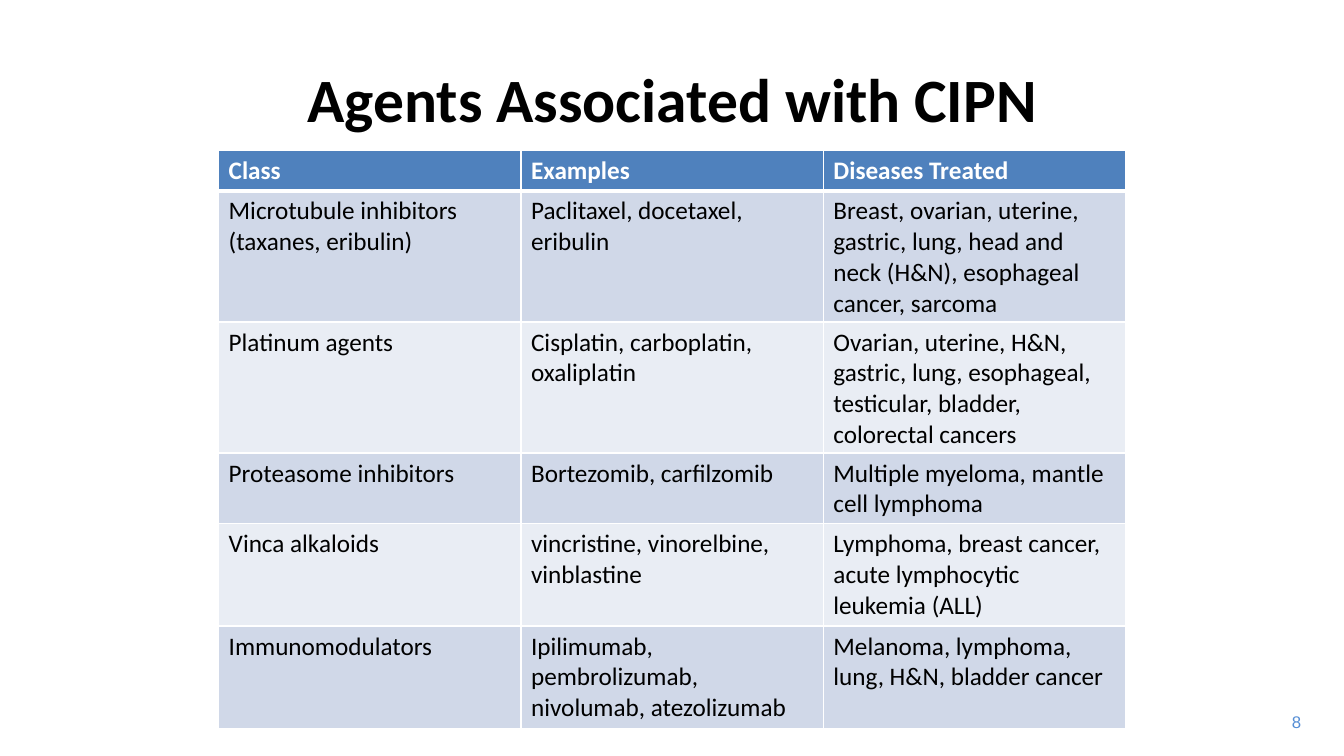
from dataclasses import dataclass

from lxml import etree
from pptx import Presentation
from pptx.dml.color import RGBColor
from pptx.enum import text
from pptx.oxml import ns
from pptx.slide import Slide
from pptx.table import _Cell
from pptx.text.text import TextFrame
from pptx.util import Cm, Pt


@dataclass(frozen=True)
class Theme:
    body_font: str = "Calibri"
    number_font: str = "Arial"
    title_size: int = 44
    table_size: int = 18
    number_size: int = 12
    ink: str = "000000"
    white: str = "FFFFFF"
    header: str = "4F81BD"
    bands: tuple[str, str] = ("D0D8E8", "E9EDF4")
    number: str = "558ED5"
    border: int = 1
    header_border: int = 3


@dataclass(frozen=True)
class Style:
    font: str
    size: int
    color: str
    bold: bool = False
    align: text.PP_ALIGN = text.PP_ALIGN.LEFT


@dataclass(frozen=True)
class Label:
    words: str
    left: float
    top: float
    width: float
    height: float
    style: Style
    anchor: text.MSO_ANCHOR = text.MSO_ANCHOR.TOP
    wrap: bool = True


@dataclass(frozen=True)
class AgentRow:
    category: str
    examples: str
    diseases: str
    height: float


THEME = Theme()

LABELS = [
    Label("8", 32, 17.81, 1.04, 0.76,
          Style(THEME.number_font, THEME.number_size, THEME.number, align=text.PP_ALIGN.RIGHT),
          wrap=False),
    Label("Agents Associated with CIPN", 5.13, 1.17, 23.65, 2.57,
          Style(THEME.body_font, THEME.title_size, THEME.ink, True, text.PP_ALIGN.CENTER),
          text.MSO_ANCHOR.MIDDLE),
]

AGENT_ROWS = [
    AgentRow("Class", "Examples", "Diseases Treated", 1.03),
    AgentRow("Microtubule inhibitors (taxanes, eribulin)", "Paclitaxel, docetaxel, eribulin",
             "Breast, ovarian, uterine, gastric, lung, head and neck (H&N), "
             "esophageal cancer, sarcoma", 3.3),
    AgentRow("Platinum agents", "Cisplatin, carboplatin, oxaliplatin",
             "Ovarian, uterine, H&N, gastric, lung, esophageal, testicular, "
             "bladder, colorectal cancers", 3.3),
    AgentRow("Proteasome inhibitors", "Bortezomib, carfilzomib",
             "Multiple myeloma, mantle cell lymphoma", 1.78),
    AgentRow("Vinca alkaloids", "vincristine, vinorelbine, vinblastine",
             "Lymphoma, breast cancer, acute lymphocytic leukemia (ALL)", 2.58),
    AgentRow("Immunomodulators", "Ipilimumab, pembrolizumab, nivolumab, atezolizumab",
             "Melanoma, lymphoma, lung, H&N, bladder cancer", 2.58),
]


def write(frame: TextFrame, words: str, style: Style) -> None:
    frame.text = words
    para = frame.paragraphs[0]
    para.alignment = style.align
    font = para.runs[0].font
    font.name = style.font
    font.size = Pt(style.size)
    font.bold = style.bold
    font.color.rgb = RGBColor.from_string(style.color)


def add_label(page: Slide, label: Label) -> None:
    box = page.shapes.add_textbox(
        Cm(label.left), Cm(label.top), Cm(label.width), Cm(label.height))
    frame = box.text_frame
    frame.word_wrap = label.wrap
    frame.vertical_anchor = label.anchor
    write(frame, label.words, label.style)


def set_border(cell: _Cell, side: str, points: int) -> None:
    properties = cell._tc.get_or_add_tcPr()
    line = etree.SubElement(properties, ns.qn(f"a:ln{side}"), w=str(Pt(points)))
    fill = etree.SubElement(line, ns.qn("a:solidFill"))
    etree.SubElement(fill, ns.qn("a:srgbClr"), val=THEME.white)


def format_cell(cell: _Cell, words: str, row_index: int) -> None:
    is_header = row_index == 0
    thick_side = {0: "B", 1: "T"}.get(row_index)
    for side in "LRTB":
        set_border(cell, side, THEME.header_border if side == thick_side else THEME.border)
    cell.fill.solid()
    background = THEME.header if is_header else THEME.bands[(row_index - 1) % 2]
    cell.fill.fore_color.rgb = RGBColor.from_string(background)
    color = THEME.white if is_header else THEME.ink
    write(cell.text_frame, words, Style(THEME.body_font, THEME.table_size, color, is_header))


def add_agent_table(page: Slide, rows: list[AgentRow]) -> None:
    total_height = sum(row.height for row in rows)
    table = page.shapes.add_table(
        len(rows), 3, Cm(5.51), Cm(3.78), Cm(22.86), Cm(total_height)).table
    for row_index, row in enumerate(rows):
        table.rows[row_index].height = Cm(row.height)
        for column_index, words in enumerate((row.category, row.examples, row.diseases)):
            format_cell(table.cell(row_index, column_index), words, row_index)


def main() -> None:
    deck = Presentation()
    deck.slide_width = Cm(33.87)
    deck.slide_height = Cm(19.05)
    page = deck.slides.add_slide(deck.slide_layouts[6])
    for label in LABELS:
        add_label(page, label)
    add_agent_table(page, AGENT_ROWS)
    deck.save("out.pptx")


if __name__ == "__main__":
    main()
